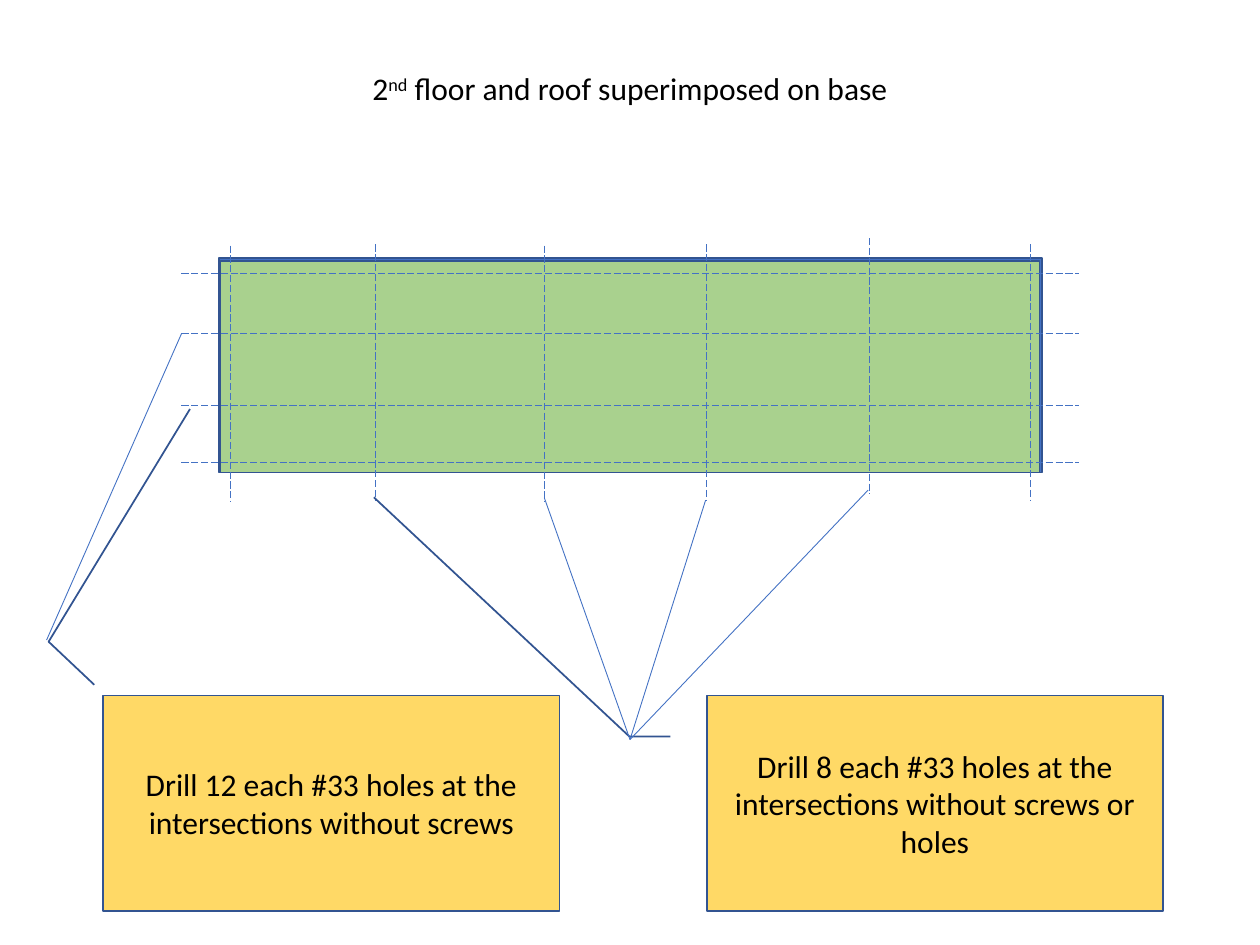
from dataclasses import dataclass

from lxml.etree import SubElement
from pptx import Presentation
from pptx.dml.color import RGBColor
from pptx.enum.dml import MSO_LINE
from pptx.enum.shapes import MSO_CONNECTOR, MSO_SHAPE
from pptx.enum.text import MSO_ANCHOR, MSO_AUTO_SIZE, PP_ALIGN
from pptx.oxml.ns import qn
from pptx.util import Inches, Pt


@dataclass(frozen=True)
class Theme:
    """Colours, font, sizes and line widths of the slide."""
    text: RGBColor = RGBColor(0, 0, 0)
    guide: RGBColor = RGBColor(0x44, 0x72, 0xC4)
    border: RGBColor = RGBColor(0x32, 0x54, 0x91)
    floor: RGBColor = RGBColor(0xA9, 0xD1, 0x8E)
    note: RGBColor = RGBColor(0xFF, 0xD9, 0x66)
    font: str = "Calibri"
    size: Pt = Pt(18)
    thin: Pt = Pt(0.5)
    outline: Pt = Pt(1)


THEME = Theme()

ROWS = (0.1, 0.58, 1.15, 1.6)
COLUMNS = ((0.08, -0.12), (1.23, -0.13), (2.57, -0.12),
           (3.86, -0.13), (5.15, -0.18), (6.43, -0.13))
COLUMN_LENGTH = 2.03
OVERHANG = 0.31


def format_text(p):
    """Centre a paragraph and give its runs the theme font."""
    p.alignment = PP_ALIGN.CENTER
    for r in p.runs:
        r.font.name = THEME.font
        r.font.size = THEME.size
        r.font.bold = False
        r.font.color.rgb = THEME.text


def add_box(shapes, kind, box, fill):
    """Add a filled, outlined shape without a shadow."""
    sp = shapes.add_shape(kind, *map(Inches, box))
    sp.shadow.inherit = False
    sp.fill.solid()
    sp.fill.fore_color.rgb = fill
    sp.line.color.rgb = THEME.border
    sp.line.width = THEME.outline
    return sp


def add_line(s, start, end, dash=None):
    """Add a thin guide line between two points."""
    line = s.shapes.add_connector(MSO_CONNECTOR.STRAIGHT, *map(Inches, (*start, *end)))
    line.line.color.rgb = THEME.guide
    line.line.width = THEME.thin
    if dash:
        line.line.dash_style = dash
    SubElement(line._element.spPr, qn("a:effectLst"))


def add_title(s, box):
    """Place the heading with its raised ordinal ending."""
    sp = s.shapes.title
    sp.left, sp.top, sp.width, sp.height = map(Inches, box)
    tf = sp.text_frame
    tf.word_wrap = True
    tf.auto_size = MSO_AUTO_SIZE.SHAPE_TO_FIT_TEXT
    tf.vertical_anchor = MSO_ANCHOR.TOP
    p = tf.paragraphs[0]
    p.line_spacing = 1.0
    for text in ("2", "nd", " floor and roof superimposed on base"):
        p.add_run().text = text
    format_text(p)
    p.runs[1]._r.get_or_add_rPr().set("baseline", "30000")


def add_plan(s, box):
    """Draw the floor over the base, crossed by dashed hole guides."""
    x, y, w, h = box
    group = s.shapes.add_group_shape()
    base = (x - 0.01, y - 0.02, w + 0.03, h + 0.02)
    add_box(group.shapes, MSO_SHAPE.RECTANGLE, base, THEME.guide)
    add_box(group.shapes, MSO_SHAPE.RECTANGLE, box, THEME.floor)
    for dy in ROWS:
        add_line(s, (x - OVERHANG, y + dy), (x + w + OVERHANG, y + dy), MSO_LINE.LONG_DASH)
    for dx, rise in COLUMNS:
        top = y + rise
        add_line(s, (x + dx, top), (x + dx, top + COLUMN_LENGTH), MSO_LINE.LONG_DASH)


def add_callout(s, box, text, adjustments, apex, targets):
    """Add a callout and the extra leaders from its apex to the guides."""
    x, y, _, _ = box
    sp = add_box(s.shapes, MSO_SHAPE.LINE_CALLOUT_2, box, THEME.note)
    for i, value in enumerate(adjustments):
        sp.adjustments[i] = value
    tf = sp.text_frame
    tf.word_wrap = True
    tf.vertical_anchor = MSO_ANCHOR.MIDDLE
    tf.text = text
    format_text(tf.paragraphs[0])
    end = (x + apex[0], y + apex[1])
    for dx, dy in targets:
        add_line(s, (x + dx, y + dy), end)


def main():
    """Build and save the slide."""
    prs = Presentation()
    prs.slide_width, prs.slide_height = Inches(10), Inches(7.5)
    s = prs.slides.add_slide(prs.slide_layouts[5])
    add_title(s, (2.39, 0.5, 5.22, 0.4))
    add_plan(s, (1.75, 2.07, 6.5, 1.68))
    add_callout(s, (5.61, 5.52, 3.62, 1.71),
                "Drill 8 each #33 holes at the intersections without screws or holes",
                (0.19, -0.08, 0.19, -0.17, -0.92, -0.73),
                (-0.61, 0.35), ((-1.29, -1.57), (-0.01, -1.55), (1.28, -1.63)))
    add_callout(s, (0.82, 5.52, 3.62, 1.71),
                "Drill 12 each #33 holes at the intersections without screws",
                (-0.05, -0.02, -0.25, -0.12, -1.33, 0.19),
                (-0.45, -0.44), ((0.62, -2.87),))
    prs.save("out.pptx")


if __name__ == "__main__":
    main()
